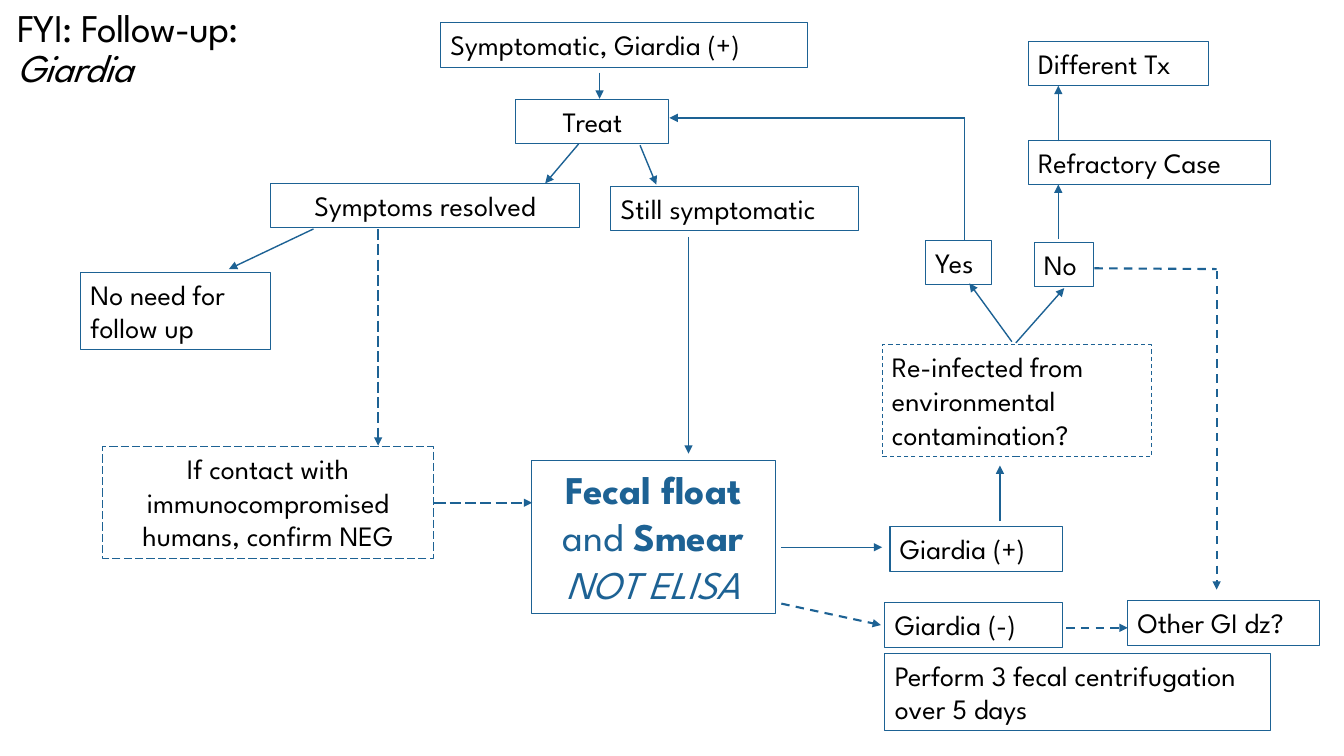
import pptx
import pptx.util
import pptx.dml.color
import pptx.enum.dml
import pptx.enum.shapes
import pptx.enum.text
import pptx.oxml.ns
import lxml.etree
from dataclasses import dataclass

Cm = pptx.util.Cm
Pt = pptx.util.Pt
Align = pptx.enum.text.PP_ALIGN
Dash = pptx.enum.dml.MSO_LINE
qn = pptx.oxml.ns.qn


@dataclass
class Theme:
    font: str = "League Spartan"
    ink: str = "000000"
    blue: str = "1D6294"
    white: str = "FFFFFF"
    body: int = 20
    large: int = 28
    edge: float = 0.75
    thin: float = 1
    thick: float = 1.5


class Chart:
    # Box height in cm for each number of text lines
    tall = {1: 1.12, 2: 1.96, 3: 2.82}

    def __init__(self, slide, theme):
        self.slide = slide
        self.theme = theme

    def color(self, code):
        return pptx.dml.color.RGBColor.from_string(code)

    def style(self, run, size, code, bold=False, slant=False):
        run.font.name = self.theme.font
        run.font.size = Pt(size)
        run.font.color.rgb = self.color(code)
        run.font.bold = bold
        run.font.italic = slant

    def frame(self, x, y, wide, high):
        shape = self.slide.shapes.add_textbox(Cm(x), Cm(y), Cm(wide), Cm(high))
        shape.text_frame.word_wrap = True
        return shape

    def edge(self, shape, dash=None):
        shape.line.color.rgb = self.color(self.theme.blue)
        shape.line.width = Pt(self.theme.edge)
        if dash:
            shape.line.dash_style = dash

    def title(self, x, y, wide, high, parts):
        para = self.frame(x, y, wide, high).text_frame.paragraphs[0]
        para.line_spacing = 0.85
        for text, slant in parts:
            run = para.add_run()
            run.text = text
            self.style(run, self.theme.large, self.theme.ink, slant=slant)
            run.font._element.set("spc", "-50")

    def box(self, text, x, y, wide, lines=1, mid=False, dash=None, fill=False):
        shape = self.frame(x, y, wide, self.tall[lines])
        self.edge(shape, dash)
        if fill:
            shape.fill.solid()
            shape.fill.fore_color.rgb = self.color(self.theme.white)
        shape.text_frame.text = text
        para = shape.text_frame.paragraphs[0]
        para.alignment = Align.CENTER if mid else Align.LEFT
        self.style(para.runs[0], self.theme.body, self.theme.ink)

    def focus(self, x, y, wide, high, parts):
        shape = self.frame(x, y, wide, high)
        self.edge(shape)
        para = shape.text_frame.paragraphs[0]
        para.alignment = Align.CENTER
        for text, bold, slant in parts:
            run = para.add_run()
            run.text = text
            self.style(run, self.theme.large, self.theme.blue, bold, slant)

    def link(self, x1, y1, x2, y2, dash=None, head=True):
        kind = pptx.enum.shapes.MSO_CONNECTOR.STRAIGHT
        link = self.slide.shapes.add_connector(
            kind, Cm(x1), Cm(y1), Cm(x2), Cm(y2))
        link.line.color.rgb = self.color(self.theme.blue)
        heavy = dash == Dash.DASH
        link.line.width = Pt(self.theme.thick if heavy else self.theme.thin)
        if dash:
            link.line.dash_style = dash
        props = link._element.spPr
        if head:
            tip = lxml.etree.SubElement(props.find(qn("a:ln")), qn("a:tailEnd"))
            tip.set("type", "triangle")
        lxml.etree.SubElement(props, qn("a:effectLst"))


def main():
    deck = pptx.Presentation()
    deck.slide_width = Cm(33.87)
    deck.slide_height = Cm(19.05)
    chart = Chart(deck.slides.add_slide(deck.slide_layouts[6]), Theme())

    # Title
    chart.title(0.18, 0.13, 7.32, 2.11,
                [("FYI: Follow-up: ", False), ("Giardia", True)])

    # Treatment and its outcomes
    chart.box("Symptomatic, Giardia (+)", 11.1, 0.58, 9.25)
    chart.box("Treat", 13, 2.51, 3.86, mid=True)
    chart.box("Symptoms resolved", 6.83, 4.62, 7.77, mid=True)
    chart.box("Still symptomatic", 15.39, 4.7, 6.25)
    chart.box("No need for follow up", 2.03, 6.86, 4.78, lines=2)
    chart.box("If contact with immunocompromised humans, confirm NEG",
              2.59, 11.25, 8.33, lines=3, mid=True, dash=Dash.LONG_DASH)

    # Test in the middle
    chart.focus(13.39, 11.61, 6.15, 3.84, [
        ("Fecal float ", True, False), ("and ", False, False),
        ("Smear ", True, False), ("NOT ELISA", False, True)])

    # Positive result
    chart.box("Giardia (+)", 22.43, 13.28, 4.34)
    chart.box("Re-infected from environmental contamination?",
              22.23, 8.69, 6.78, lines=3, dash=Dash.DASH)
    chart.box("Yes", 23.32, 6.05, 1.68)
    chart.box("No", 26.06, 6.1, 1.5)
    chart.box("Refractory Case", 25.91, 3.53, 6.12)
    chart.box("Different Tx", 25.91, 1.04, 4.55)

    # Negative result
    chart.box("Perform 3 fecal centrifugation over 5 days",
              22.3, 16.46, 9.73, lines=2)
    chart.box("Other GI dz?", 28.42, 15.14, 4.83)
    chart.box("Giardia (-)", 22.3, 15.19, 4.47, fill=True)

    # Solid arrows
    for ends in [
        (15.11, 1.83, 15.11, 2.49),
        (14.58, 3.63, 13.74, 4.62),
        (16.13, 3.66, 16.54, 4.65),
        (7.9, 5.77, 5.77, 6.78),
        (17.35, 5.97, 17.35, 11.43),
        (19.69, 13.79, 22.23, 13.79),
        (25.2, 13.13, 25.2, 11.73),
        (25.5, 8.61, 24.43, 7.14),
        (25.6, 8.64, 26.82, 7.26),
        (26.67, 6.02, 26.67, 4.65),
        (26.67, 3.56, 26.67, 2.16),
    ]:
        chart.link(*ends)

    # Way back from Yes to Treat
    chart.link(24.31, 6.05, 24.31, 3, head=False)
    chart.link(24.33, 2.97, 16.87, 2.97)

    # Check on contact with people at risk
    chart.link(9.53, 5.77, 9.53, 11.23, Dash.LONG_DASH)
    chart.link(10.95, 12.67, 13.41, 12.67, Dash.LONG_DASH)

    # Ways to other disease
    chart.link(19.69, 15.21, 22.2, 15.75, Dash.DASH)
    chart.link(26.87, 15.82, 28.42, 15.82, Dash.DASH)
    chart.link(27.58, 6.76, 30.66, 6.78, Dash.DASH, head=False)
    chart.link(30.66, 6.83, 30.66, 14.86, Dash.DASH)

    deck.save("out.pptx")


if __name__ == "__main__":
    main()
